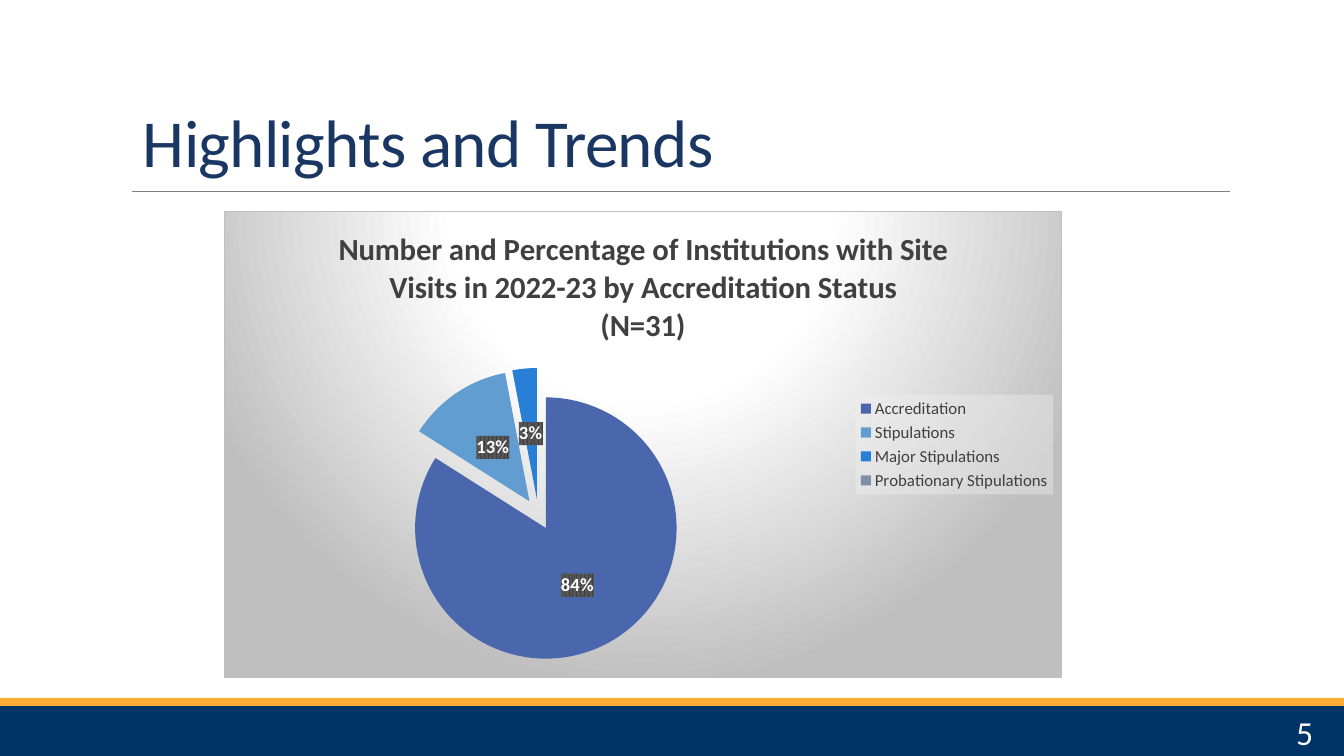
from lxml.etree import SubElement
from pptx import Presentation
from pptx.chart.data import CategoryChartData
from pptx.dml.color import RGBColor
from pptx.enum.chart import XL_CHART_TYPE, XL_LABEL_POSITION, XL_LEGEND_POSITION
from pptx.enum.shapes import MSO_CONNECTOR, MSO_SHAPE
from pptx.enum.text import MSO_ANCHOR, PP_ALIGN
from pptx.oxml import parse_xml
from pptx.oxml.ns import nsdecls, qn
from pptx.util import Emu, Pt

NAVY = RGBColor(0x00, 0x33, 0x66)
GOLD = RGBColor(0xFA, 0xAC, 0x35)
GRAY = RGBColor(0x80, 0x80, 0x80)
TITLE_BLUE = RGBColor(0x1A, 0x37, 0x63)
DARK = RGBColor(0x40, 0x40, 0x40)
BLACK = RGBColor(0, 0, 0)
WHITE = RGBColor(0xFF, 0xFF, 0xFF)
STATUSES = [
    ("Accreditation", 84, RGBColor(0x4A, 0x66, 0xAC)),
    ("Stipulations", 13, RGBColor(0x62, 0x9D, 0xD1)),
    ("Major Stipulations", 3, RGBColor(0x29, 0x7F, 0xD5)),
    ("Probationary Stipulations", 0, RGBColor(0x7F, 0x8F, 0xA9)),
]


def px(*lengths):
    return [Emu(round(length * 914400 / 100.8)) for length in lengths]


def style(font, size, color, bold=False):
    font.name, font.size, font.bold = "Calibri", Pt(size), bold
    font.color.rgb = color


deck = Presentation()
deck.slide_width, deck.slide_height = px(1344, 756)
page = deck.slides.add_slide(deck.slide_layouts[6])

# Footer bands
for top, height, color in [(706, 50, NAVY), (698, 8, GOLD)]:
    band = page.shapes.add_shape(MSO_SHAPE.RECTANGLE, *px(0, top, 1344, height))
    band.shadow.inherit = False
    band.fill.solid()
    band.fill.fore_color.rgb = color
    band.line.fill.background()

# Rule under the title
rule = page.shapes.add_connector(MSO_CONNECTOR.STRAIGHT, *px(132, 191, 1230, 191))
rule.line.color.rgb = GRAY
rule.line.width = Pt(0.5)
SubElement(rule._element.spPr, qn("a:effectLst"))

# Title and page number
for text, place, size, color, anchor, align in [
    ("Highlights and Trends", (133, 61, 1109, 125), 48, TITLE_BLUE, MSO_ANCHOR.BOTTOM, PP_ALIGN.LEFT),
    ("5", (1179, 712, 144, 40), 24, WHITE, MSO_ANCHOR.MIDDLE, PP_ALIGN.RIGHT),
]:
    box = page.shapes.add_textbox(*px(*place))
    frame = box.text_frame
    frame.word_wrap = True
    frame.vertical_anchor = anchor
    frame.text = text
    para = frame.paragraphs[0]
    para.alignment = align
    span = para.runs[0]
    style(span.font, size, color)
    if anchor == MSO_ANCHOR.BOTTOM:
        para.line_spacing = 0.85
        span.font._element.set("spc", "-50")

# Pie chart
data = CategoryChartData()
data.categories = [name for name, share, color in STATUSES]
data.add_series("Series 1", [share for name, share, color in STATUSES])
chart = page.shapes.add_chart(XL_CHART_TYPE.PIE, *px(224, 211, 838, 467), data).chart
style(chart.font, 10, BLACK)
plot = chart.plots[0]
plot.vary_by_categories = True
pie = plot.series[0]
for index, (name, share, color) in enumerate(STATUSES):
    slice_fill = pie.points[index].format.fill
    slice_fill.solid()
    slice_fill.fore_color.rgb = color
pie._element.find(qn("c:dPt")).addprevious(
    parse_xml(f'<c:explosion {nsdecls("c")} val="12"/>'))

# Chart title
chart.has_title = True
heading = chart.chart_title.text_frame
heading.text = ("Number and Percentage of Institutions with Site Visits in 2022-23 "
                "by Accreditation Status\n(N=31)")
for para in heading.paragraphs:
    style(para.runs[0].font, 22, DARK, True)

# Percent labels on a dark pattern, none for the empty slice
labels = pie.data_labels
labels.show_percentage = True
labels.show_value = False
labels.position = XL_LABEL_POSITION.CENTER
style(labels.font, 13.3, WHITE, True)
labels._element.find(qn("c:txPr")).addprevious(parse_xml(
    f'<c:spPr {nsdecls("c", "a")}><a:pattFill prst="pct75">'
    '<a:fgClr><a:srgbClr val="404040"/></a:fgClr>'
    '<a:bgClr><a:srgbClr val="595959"/></a:bgClr></a:pattFill></c:spPr>'))
labels._element.insert(0, parse_xml(
    f'<c:dLbl {nsdecls("c")}><c:idx val="3"/><c:delete val="1"/></c:dLbl>'))

# Legend on a translucent panel
chart.has_legend = True
legend = chart.legend
legend.position = XL_LEGEND_POSITION.RIGHT
legend.include_in_layout = False
style(legend.font, 12, DARK)
legend._element.find(qn("c:txPr")).addprevious(parse_xml(
    f'<c:spPr {nsdecls("c", "a")}><a:solidFill><a:srgbClr val="F2F2F2">'
    '<a:alpha val="39000"/></a:srgbClr></a:solidFill></c:spPr>'))

# Plot position inside the chart
plot_area = chart._chartSpace.chart.plotArea
for layout in plot_area.findall(qn("c:layout")):
    plot_area.remove(layout)
plot_area.insert(0, parse_xml(
    f'<c:layout {nsdecls("c")}><c:manualLayout><c:layoutTarget val="inner"/>'
    '<c:xMode val="edge"/><c:yMode val="edge"/><c:x val="0.2"/><c:y val="0.33"/>'
    '<c:w val="0.35"/><c:h val="0.64"/></c:manualLayout></c:layout>'))

# Radial chart background
chart._chartSpace.chart.addnext(parse_xml(
    f'<c:spPr {nsdecls("c", "a")}><a:gradFill><a:gsLst>'
    '<a:gs pos="0"><a:srgbClr val="FFFFFF"/></a:gs>'
    '<a:gs pos="39000"><a:srgbClr val="FFFFFF"/></a:gs>'
    '<a:gs pos="100000"><a:srgbClr val="BFBFBF"/></a:gs></a:gsLst>'
    '<a:path path="circle"><a:fillToRect l="50000" t="-80000" r="50000" b="180000"/>'
    '</a:path></a:gradFill><a:ln w="9525"><a:solidFill><a:srgbClr val="BFBFBF"/>'
    '</a:solidFill></a:ln></c:spPr>'))

deck.save("out.pptx")
